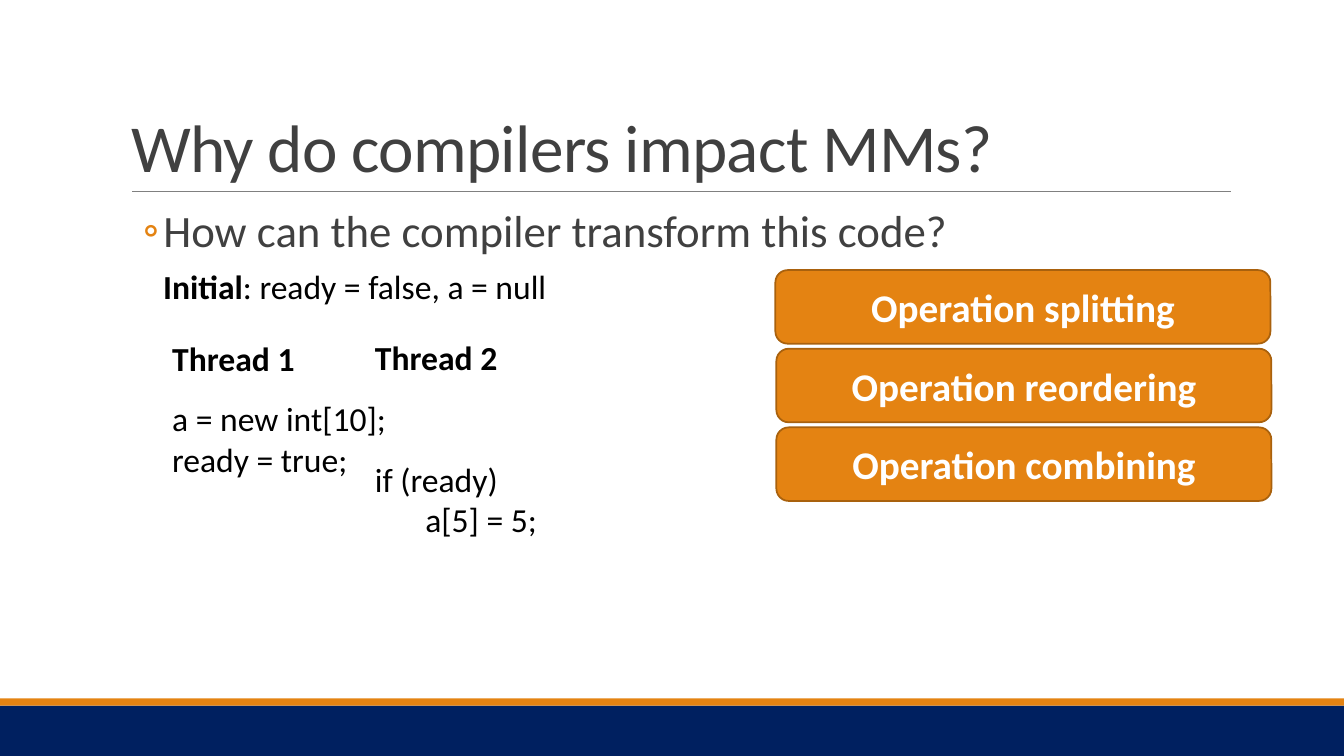
import pptx
import pptx.util
import pptx.dml.color
import pptx.enum.shapes
import pptx.enum.text
import pptx.oxml
import pptx.oxml.ns
from lxml import etree

Inches = pptx.util.Inches
Pt = pptx.util.Pt
SHAPE = pptx.enum.shapes.MSO_SHAPE
ANCHOR = pptx.enum.text.MSO_ANCHOR
ALIGN = pptx.enum.text.PP_ALIGN
NO_FIT = pptx.enum.text.MSO_AUTO_SIZE.NONE

THEME = {
    "font": "Calibri",
    "navy": "002060", "orange": "E48312", "orange_edge": "A9610D",
    "rule": "808080", "heading": "404040", "code": "000000", "white": "FFFFFF",
    "title_size": 48, "body_size": 32, "box_size": 28, "code_size": 24,
}


def color(name):
    return pptx.dml.color.RGBColor.from_string(THEME[name])


def style(item, size, color_name, bold=False):
    values = {"name": THEME["font"], "size": Pt(THEME[size]), "bold": bold}
    for name, value in values.items():
        setattr(item.font, name, value)
    item.font.color.rgb = color(color_name)


presentation = pptx.Presentation()
presentation.slide_width = Inches(13.33)
presentation.slide_height = Inches(7.5)
slide = presentation.slides.add_slide(presentation.slide_layouts[1])

for top, height, fill in [(7, 0.5, "navy"), (6.93, 0.07, "orange")]:
    band = slide.shapes.add_shape(
        SHAPE.RECTANGLE, 0, Inches(top), presentation.slide_width, Inches(height))
    band.shadow.inherit = False
    band.fill.solid()
    band.fill.fore_color.rgb = color(fill)
    band.line.fill.background()

rule = slide.shapes.add_connector(
    pptx.enum.shapes.MSO_CONNECTOR.STRAIGHT,
    Inches(1.31), Inches(1.9), Inches(12.21), Inches(1.9))
rule.line.color.rgb = color("rule")
rule.line.width = Pt(0.5)
etree.SubElement(rule._element.spPr, pptx.oxml.ns.qn("a:effectLst"))

title = slide.shapes.title
body = slide.placeholders[1]
placeholders = [
    (title, 0.31, 1.59, 0.1, ANCHOR.BOTTOM, "Why do compilers impact MMs?",
     {"alignment": ALIGN.LEFT, "line_spacing": 0.85, "space_before": Pt(0)}),
    (body, 2.02, 0.88, 0, ANCHOR.TOP, "How can the compiler transform this code?",
     {"level": 1, "alignment": ALIGN.LEFT, "line_spacing": 0.9,
      "space_before": Pt(0), "space_after": Pt(4)}),
]
for placeholder, top, height, inset, anchor, text, paragraph_format in placeholders:
    position = {"left": 1.2, "top": top, "width": 11, "height": height}
    for name, value in position.items():
        setattr(placeholder, name, Inches(value))
    frame = placeholder.text_frame
    frame_format = {"auto_size": NO_FIT, "vertical_anchor": anchor, "word_wrap": True,
                    "margin_left": Inches(inset), "margin_right": Inches(inset)}
    for name, value in frame_format.items():
        setattr(frame, name, value)
    frame.text = text
    for name, value in paragraph_format.items():
        setattr(frame.paragraphs[0], name, value)

title_run = title.text_frame.paragraphs[0].runs[0]
style(title_run, "title_size", "heading")
title_run.font._element.set("spc", "-50")

question = body.text_frame.paragraphs[0]
properties = question._p.get_or_add_pPr()
properties.set("marL", str(Inches(0.42)))
properties.set("indent", str(Inches(-0.2)))
namespace = pptx.oxml.ns.nsdecls("a")
for bullet in [
    f'<a:buClr {namespace}><a:srgbClr val="{THEME["orange"]}"/></a:buClr>',
    f'<a:buFont {namespace} typeface="{THEME["font"]}"/>',
    f'<a:buChar {namespace} char="◦"/>',
]:
    properties.append(pptx.oxml.parse_xml(bullet))
style(question.runs[0], "body_size", "heading")

code_boxes = [
    (1.61, 3.3, 2.36, 1.51, [
        (0, 0, [("Thread 1", True)]),
        (14.6, 0, [("a = new int[10];", False)]),
        (0, 0, [("ready = true;", False)])]),
    (3.62, 3.29, 2.01, 2.12, [
        (0, 0, [("Thread 2", True)]),
        (58.6, 0, [("if (ready)", False)]),
        (0, 0.5, [("a[5] = 5;", False)])]),
    (1.52, 2.59, 4.8, 0.5, [
        (0, 0, [("Initial", True), (": ready = false, a = null", False)])]),
]
for left, top, width, height, lines in code_boxes:
    box = slide.shapes.add_textbox(
        Inches(left), Inches(top), Inches(width), Inches(height))
    frame = box.text_frame
    frame.word_wrap = True
    for number, (gap, indent, runs) in enumerate(lines):
        paragraph = frame.add_paragraph() if number else frame.paragraphs[0]
        paragraph.space_before = Pt(gap)
        if indent:
            paragraph._p.get_or_add_pPr().set("marL", str(Inches(indent)))
        for text, bold in runs:
            run = paragraph.add_run()
            run.text = text
            style(run, "code_size", "code", bold)

operations = [(7.69, "splitting"), (7.7, "reordering"), (7.7, "combining")]
for row, (left, operation) in enumerate(operations):
    box = slide.shapes.add_shape(
        SHAPE.ROUNDED_RECTANGLE, Inches(left), Inches(2.68 + 0.78 * row),
        Inches(4.91), Inches(0.73))
    box.shadow.inherit = False
    box.fill.solid()
    box.fill.fore_color.rgb = color("orange")
    box.line.color.rgb = color("orange_edge")
    box.line.width = Pt(1.25)
    box.text_frame.vertical_anchor = ANCHOR.MIDDLE
    paragraph = box.text_frame.paragraphs[0]
    paragraph.alignment = ALIGN.CENTER
    run = paragraph.add_run()
    run.text = f"Operation {operation}"
    style(run, "box_size", "white", True)

presentation.save("out.pptx")
